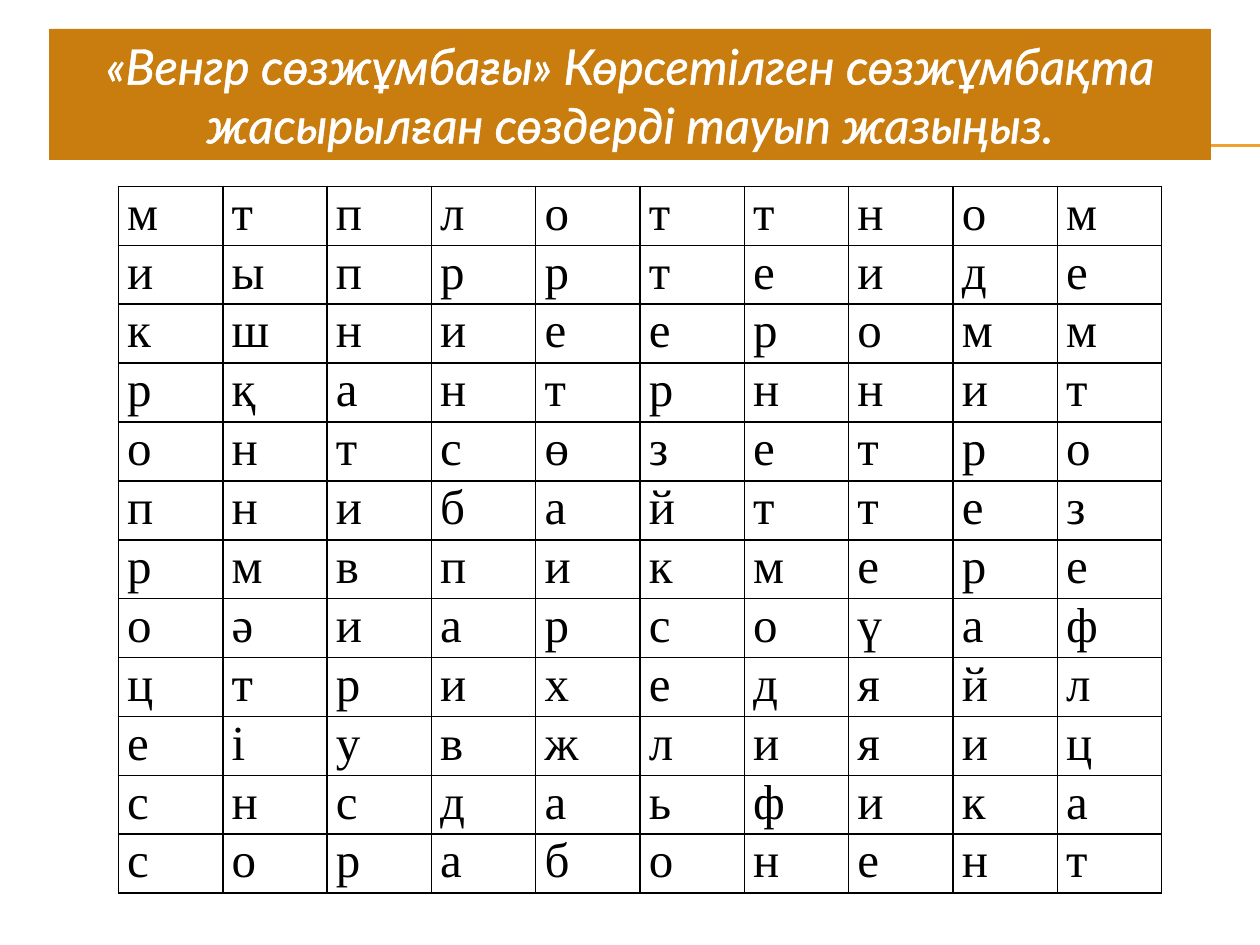
from dataclasses import dataclass

from lxml import etree
from pptx import Presentation
from pptx import util as u
from pptx.dml.color import RGBColor
from pptx.enum import shapes, text
from pptx.oxml import ns

BLACK = RGBColor(0x00, 0x00, 0x00)
WHITE = RGBColor(0xFF, 0xFF, 0xFF)
ORANGE = RGBColor(0xC8, 0x7D, 0x0E)
AMBER = RGBColor(0xF0, 0xA2, 0x2E)

TITLE = "«Венгр сөзжұмбағы» Көрсетілген сөзжұмбақта жасырылған сөздерді тауып жазыңыз."
LETTER_ROWS = [
    "мтплоттном",
    "иыпрртеиде",
    "кшниееромм",
    "рқантрннит",
    "онтсөзетро",
    "пнибайттез",
    "рмвпикмере",
    "оәиарсоүаф",
    "цтрихедяйл",
    "еіувжлияиц",
    "снсдаьфика",
    "сорабонент",
]
RULE_HEIGHTS = (1.15, 1.16)
CELL_MARGINS = {
    "margin_left": u.Inches(0.07),
    "margin_right": u.Inches(0.07),
    "margin_top": 0,
    "margin_bottom": 0,
}


@dataclass(frozen=True)
class Box:
    left: float
    top: float
    width: float
    height: float

    def lengths(self) -> list[u.Length]:
        return [u.Inches(v) for v in (self.left, self.top, self.width, self.height)]


@dataclass(frozen=True)
class TextStyle:
    font: str
    color: RGBColor
    alignment: text.PP_ALIGN
    italic: bool = False
    size: int = 28


TITLE_BOX = Box(0.39, 0.23, 9.22, 1.04)
GRID_BOX = Box(0.94, 1.48, 8.28, 5.6)
TITLE_STYLE = TextStyle("Lato", WHITE, text.PP_ALIGN.CENTER, italic=True)
LETTER_STYLE = TextStyle("Times New Roman", BLACK, text.PP_ALIGN.JUSTIFY)


def set_attributes(target, values: dict) -> None:
    for name, value in values.items():
        setattr(target, name, value)


def add_solid_line(parent, tag: str, color: RGBColor, points: float):
    """Append a solid line element to an XML parent and return it."""
    line = etree.SubElement(parent, ns.qn(tag), w=str(u.Pt(points)))
    fill = etree.SubElement(line, ns.qn("a:solidFill"))
    etree.SubElement(fill, ns.qn("a:srgbClr"), val=str(color))
    return line


def write_text(frame, content: str, style: TextStyle):
    paragraph = frame.paragraphs[0]
    paragraph.alignment = style.alignment
    run = paragraph.add_run()
    run.text = content
    set_attributes(run.font, {
        "name": style.font,
        "size": u.Pt(style.size),
        "italic": style.italic,
    })
    run.font.color.rgb = style.color
    return run


def add_rule(slide, height: float) -> None:
    rule = slide.shapes.add_connector(
        shapes.MSO_CONNECTOR.STRAIGHT,
        u.Inches(0.56), u.Inches(height), u.Inches(10), u.Inches(height))
    rule.line.color.rgb = AMBER
    rule.line.width = u.Pt(0.75)
    etree.SubElement(rule._element.spPr, ns.qn("a:effectLst"))


def add_title(slide) -> None:
    banner = slide.shapes.add_shape(shapes.MSO_SHAPE.RECTANGLE, *TITLE_BOX.lengths())
    banner.shadow.inherit = False
    banner.fill.solid()
    banner.fill.fore_color.rgb = ORANGE
    banner.line.fill.background()
    set_attributes(banner.text_frame, {
        "word_wrap": True,
        "vertical_anchor": text.MSO_ANCHOR.MIDDLE,
        "auto_size": text.MSO_AUTO_SIZE.SHAPE_TO_FIT_TEXT,
    })
    run = write_text(banner.text_frame, TITLE, TITLE_STYLE)
    properties = run._r.get_or_add_rPr()
    properties.insert(0, add_solid_line(properties, "a:ln", WHITE, 1.45))


def style_cell(cell, letter: str) -> None:
    set_attributes(cell, CELL_MARGINS)
    write_text(cell.text_frame, letter, LETTER_STYLE)
    properties = cell._tc.get_or_add_tcPr()
    for side in "LRTB":
        add_solid_line(properties, f"a:ln{side}", BLACK, 1)
    cell.fill.background()


def add_letter_grid(slide) -> None:
    rows, columns = len(LETTER_ROWS), len(LETTER_ROWS[0])
    table = slide.shapes.add_table(rows, columns, *GRID_BOX.lengths()).table
    set_attributes(table, {"first_row": False, "horz_banding": False})
    for column in table.columns:
        column.width = u.Inches(GRID_BOX.width / columns)
    for row, letters in zip(table.rows, LETTER_ROWS):
        row.height = u.Inches(GRID_BOX.height / rows)
        for cell, letter in zip(row.cells, letters):
            style_cell(cell, letter)


def main() -> None:
    presentation = Presentation()
    set_attributes(presentation, {
        "slide_width": u.Inches(10),
        "slide_height": u.Inches(7.5),
    })
    slide = presentation.slides.add_slide(presentation.slide_layouts[6])
    for height in RULE_HEIGHTS:
        add_rule(slide, height)
    add_title(slide)
    add_letter_grid(slide)
    presentation.save("out.pptx")


if __name__ == "__main__":
    main()
